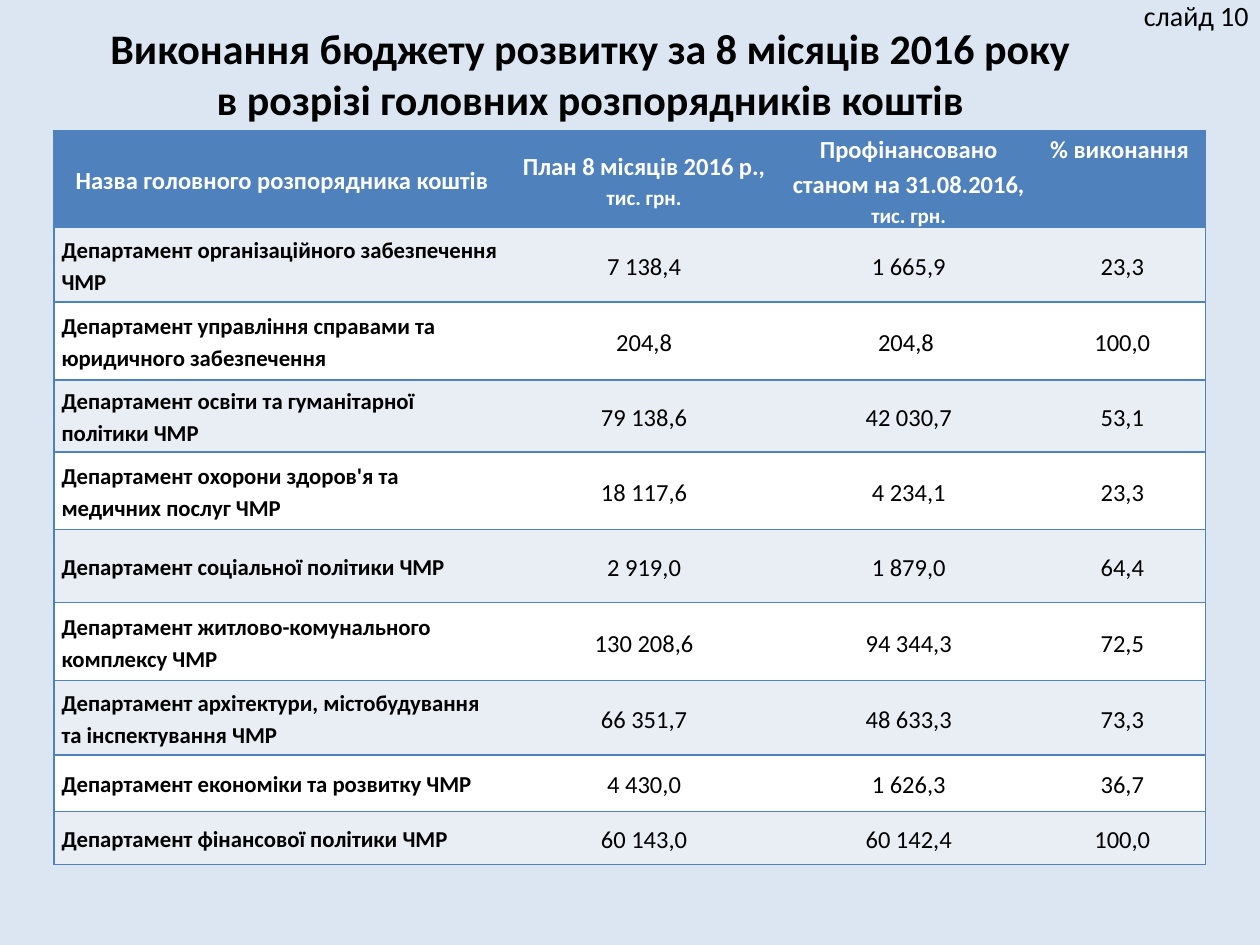
from lxml.etree import SubElement
from pptx import Presentation
from pptx.dml.color import RGBColor as Rgb
from pptx.enum.text import MSO_ANCHOR as Anchor, PP_ALIGN as Align
from pptx.oxml.ns import qn
from pptx.util import Cm, Pt

COLORS = {"background": "DCE6F2", "header": "4F81BD", "band": "E9EDF4",
          "white": "FFFFFF", "text": "000000"}
NO_GRID_STYLE = "{2D5ABB26-0587-4C30-8999-92F81FD0307C}"

HEADING = "Виконання бюджету розвитку за 8 місяців 2016 року в розрізі головних розпорядників коштів"
PAGE_LABEL = "слайд 10"
COLUMN_TITLES = [
    [("Назва головного розпорядника коштів", 14)],
    [("План 8 місяців 2016 р., ", 14), ("тис. грн.", 12)],
    [("Профінансовано", 14), (" ", 9), ("станом на 31.08.2016, ", 14), ("тис. грн.", 12)],
    [("% виконання ", 14)],
]
DEPARTMENTS = [
    ("Департамент організаційного забезпечення ЧМР", "7 138,4", "1 665,9", "23,3"),
    ("Департамент управління справами та юридичного забезпечення", "204,8", "204,8 ", "100,0"),
    ("Департамент освіти та гуманітарної політики ЧМР", "79 138,6", "42 030,7", "53,1"),
    ("Департамент охорони здоров'я та медичних послуг ЧМР", "18 117,6", "4 234,1", "23,3"),
    ("Департамент соціальної політики ЧМР", "2 919,0", "1 879,0", "64,4"),
    ("Департамент житлово-комунального комплексу ЧМР", "130 208,6", "94 344,3", "72,5"),
    ("Департамент архітектури, містобудування та інспектування ЧМР", "66 351,7", "48 633,3", "73,3"),
    ("Департамент економіки та розвитку ЧМР", "4 430,0", "1 626,3", "36,7"),
    ("Департамент фінансової політики ЧМР", "60 143,0", "60 142,4", "100,0"),
]
COLUMN_WIDTHS = [9.19, 5.41, 5.26, 3.35]
ROW_HEIGHTS = [1.5, 1.5, 1.57, 1.45, 1.57, 1.47, 1.57, 1.5, 1.14, 1.07]


def write(frame, text, size=14, color="text", bold=False, align=Align.LEFT, spacing=None):
    runs = [(text, size)] if isinstance(text, str) else text
    paragraph = frame.paragraphs[0]
    paragraph.alignment = align
    paragraph.line_spacing = spacing
    for words, points in runs:
        run = paragraph.add_run()
        run.text = words
        run.font.name = "Calibri"
        run.font.size = Pt(points)
        run.font.bold = bold
        run.font.color.rgb = Rgb.from_string(COLORS[color])


def style_cell(cell, fill, sides, anchor):
    cell.margin_left = cell.margin_right = Cm(0.15)
    cell.margin_top = cell.margin_bottom = 0
    cell.vertical_anchor = anchor
    properties = cell._tc.get_or_add_tcPr()
    for side in sides:
        border = SubElement(properties, qn(f"a:ln{side}"), w=str(Pt(1)))
        paint = SubElement(border, qn("a:solidFill"))
        SubElement(paint, qn("a:srgbClr"), val=COLORS["header"])
    cell.fill.solid()
    cell.fill.fore_color.rgb = Rgb.from_string(COLORS[fill])


def add_budget_table(slide):
    rows = [COLUMN_TITLES, *DEPARTMENTS]
    last = len(COLUMN_WIDTHS) - 1
    frame = slide.shapes.add_table(len(rows), last + 1, Cm(1.09), Cm(2.64),
                                   Cm(sum(COLUMN_WIDTHS)), Cm(sum(ROW_HEIGHTS)))
    budget = frame.table
    budget._tbl.tblPr.find(qn("a:tableStyleId")).text = NO_GRID_STYLE
    for column, width in zip(budget.columns, COLUMN_WIDTHS):
        column.width = Cm(width)
    for r, (row, height) in enumerate(zip(rows, ROW_HEIGHTS)):
        budget.rows[r].height = Cm(height)
        header = r == 0
        fill = "header" if header else ("white", "band")[r % 2]
        for c, text in enumerate(row):
            cell = budget.cell(r, c)
            sides = ["L"] * (c == 0) + ["R"] * (c == last) + ["T", "B"]
            anchor = Anchor.TOP if header and c == last else Anchor.MIDDLE
            style_cell(cell, fill, sides, anchor)
            department = c == 0 and not header
            write(cell.text_frame, text, size=13 if department else 14,
                  color="white" if header else "text", bold=header or department,
                  align=Align.LEFT if department else Align.CENTER, spacing=1.15)


def main():
    deck = Presentation()
    deck.slide_width, deck.slide_height = Cm(25.4), Cm(19.05)
    slide = deck.slides.add_slide(deck.slide_layouts[5])
    slide.background.fill.solid()
    slide.background.fill.fore_color.rgb = Rgb.from_string(COLORS["background"])

    page_label = slide.shapes.add_textbox(Cm(22.81), Cm(-0.15), Cm(2.97), Cm(0.94))
    page_label.text_frame.word_wrap = True
    write(page_label.text_frame, PAGE_LABEL, size=16)

    add_budget_table(slide)

    heading = slide.shapes.title
    heading.left, heading.top, heading.width, heading.height = Cm(1.9), Cm(0.33), Cm(20), Cm(2.31)
    heading.text_frame.vertical_anchor = Anchor.TOP
    write(heading.text_frame, HEADING, size=24, bold=True, align=Align.CENTER)

    deck.save("out.pptx")


if __name__ == "__main__":
    main()
